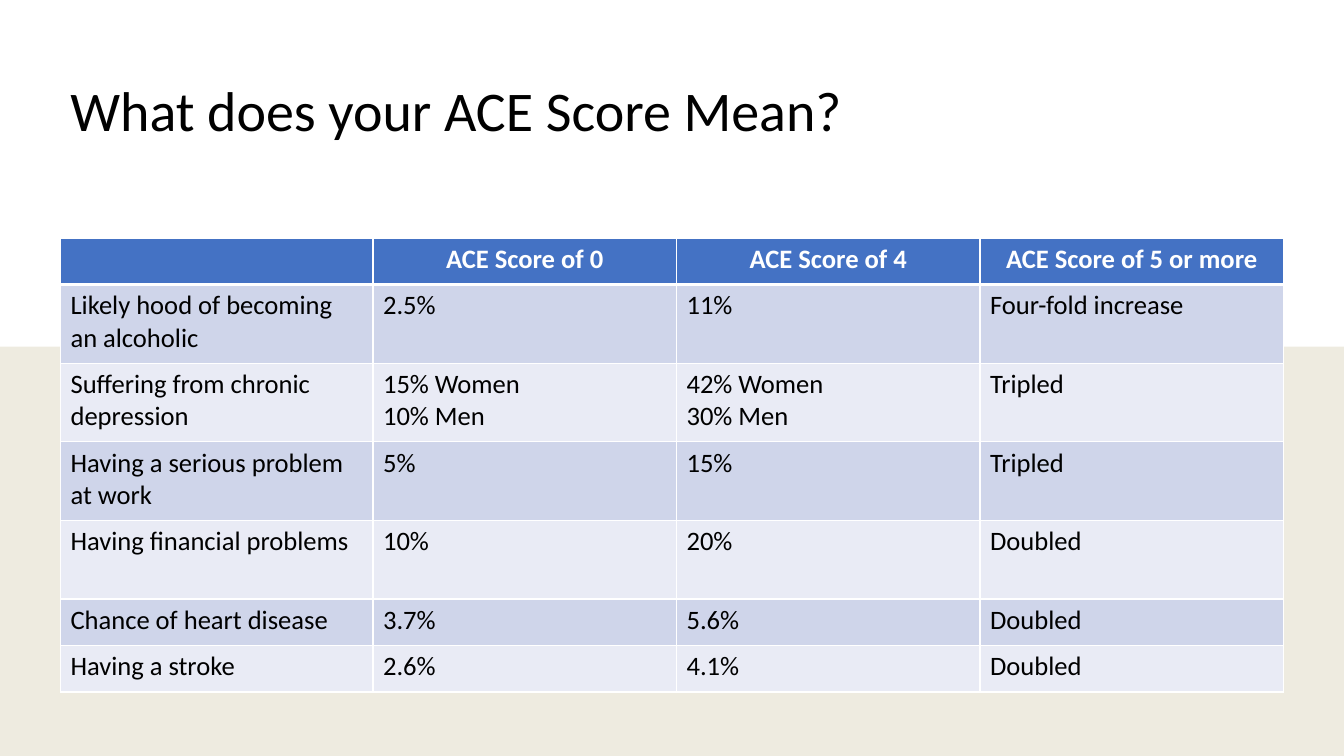
from dataclasses import dataclass
from typing import Optional

from lxml.etree import SubElement
from pptx import Presentation
from pptx.dml.color import RGBColor
from pptx.enum.shapes import MSO_SHAPE as Shape
from pptx.enum.text import MSO_ANCHOR as Anchor, PP_ALIGN as Align
from pptx.oxml.ns import qn
from pptx.util import Inches, Length, Pt

SLIDE_WIDTH, SLIDE_HEIGHT = Inches(13.33), Inches(7.5)


@dataclass(frozen=True)
class Theme:
    font: str = "Calibri"
    title_size: int = 40
    table_size: int = 19
    ink: str = "000000"
    paper: str = "FFFFFF"
    grey: str = "F2F2F2"
    gold: str = "BF9000"
    header: str = "4472C4"
    bands: tuple[str, str] = ("CFD5EA", "E9EBF5")
    thin_rule: int = 1
    header_rule: int = 3


@dataclass(frozen=True)
class Box:
    """A frame in percent of the slide's width and height."""
    left: float
    top: float
    width: float
    height: float

    def frame(self) -> tuple[Length, Length, Length, Length]:
        return across(self.left), down(self.top), across(self.width), down(self.height)


@dataclass(frozen=True)
class Layer:
    box: Box
    color: str
    opacity: Optional[int] = None


@dataclass(frozen=True)
class Risk:
    """One table row; its height is in percent of the slide."""
    texts: tuple[str, str, str, str]
    height: float


def across(percent: float) -> Length:
    return Length(round(SLIDE_WIDTH * percent / 100))


def down(percent: float) -> Length:
    return Length(round(SLIDE_HEIGHT * percent / 100))


THEME = Theme()
FULL = Box(0, 0, 100, 100)
LAYERS = (
    Layer(FULL, THEME.grey),
    Layer(FULL, THEME.gold, opacity=7),
    Layer(Box(0, 0, 100, 45.85), THEME.paper),
)
TITLE = Box(4.5, 5.35, 91, 19.35)
SHORT, TALL = 6.15, 10.4
TABLE = Box(4.5, 31.5, 91, 3 * SHORT + 4 * TALL)
FIRST_COLUMN = 23.25
RISKS = (
    Risk(("", "ACE Score of 0", "ACE Score of 4", "ACE Score of 5 or more"), SHORT),
    Risk(("Likely hood of becoming an alcoholic", "2.5%", "11%", "Four-fold increase"), TALL),
    Risk(("Suffering from chronic depression", "15% Women\n10% Men",
          "42% Women\n30% Men", "Tripled"), TALL),
    Risk(("Having a serious problem at work", "5%", "15%", "Tripled"), TALL),
    Risk(("Having financial problems", "10%", "20%", "Doubled"), TALL),
    Risk(("Chance of heart disease", "3.7%", "5.6%", "Doubled"), SHORT),
    Risk(("Having a stroke", "2.6%", "4.1%", "Doubled"), SHORT),
)


def style(paragraph, size: int, color: str, bold: bool = False) -> None:
    font = paragraph.font
    font.name, font.size, font.bold = THEME.font, Pt(size), bold
    font.color.rgb = RGBColor.from_string(color)


def add_layer(slide, layer: Layer) -> None:
    panel = slide.shapes.add_shape(Shape.RECTANGLE, *layer.box.frame())
    panel.shadow.inherit = False
    panel.line.fill.background()
    panel.fill.solid()
    panel.fill.fore_color.rgb = RGBColor.from_string(layer.color)
    if layer.opacity is not None:
        color = panel.fill._xPr.find(f".//{qn('a:srgbClr')}")
        SubElement(color, qn("a:alpha"), val=str(layer.opacity * 1000))


def add_title(slide, text: str) -> None:
    frame = slide.shapes.add_textbox(*TITLE.frame()).text_frame
    frame.word_wrap = True
    frame.vertical_anchor = Anchor.MIDDLE
    frame.text = text
    heading = frame.paragraphs[0]
    heading.line_spacing = 0.9
    style(heading, THEME.title_size, THEME.ink)


def set_borders(cell, top: int, bottom: int) -> None:
    """Rule all four sides; must run before the cell gets its fill."""
    widths = {"L": THEME.thin_rule, "R": THEME.thin_rule, "T": top, "B": bottom}
    properties = cell._tc.get_or_add_tcPr()
    for side, points in widths.items():
        rule = SubElement(properties, qn(f"a:ln{side}"), w=str(Pt(points)))
        SubElement(SubElement(rule, qn("a:solidFill")), qn("a:srgbClr"), val=THEME.paper)


def fill_cell(cell, text: str, row: int) -> None:
    is_header = row == 0
    set_borders(cell,
                top=THEME.header_rule if row == 1 else THEME.thin_rule,
                bottom=THEME.header_rule if is_header else THEME.thin_rule)
    cell.fill.solid()
    cell.fill.fore_color.rgb = RGBColor.from_string(
        THEME.header if is_header else THEME.bands[(row - 1) % 2])
    cell.text = text
    for paragraph in cell.text_frame.paragraphs:
        paragraph.alignment = Align.CENTER if is_header else Align.LEFT
        style(paragraph, THEME.table_size, THEME.paper if is_header else THEME.ink, is_header)


def add_risk_table(slide) -> None:
    column_count = len(RISKS[0].texts)
    table = slide.shapes.add_table(len(RISKS), column_count, *TABLE.frame()).table
    score_column = (TABLE.width - FIRST_COLUMN) / (column_count - 1)
    for index, column in enumerate(table.columns):
        column.width = across(score_column if index else FIRST_COLUMN)
    for row, risk in enumerate(RISKS):
        table.rows[row].height = down(risk.height)
        for index, text in enumerate(risk.texts):
            fill_cell(table.cell(row, index), text, row)


def main() -> None:
    presentation = Presentation()
    presentation.slide_width, presentation.slide_height = SLIDE_WIDTH, SLIDE_HEIGHT
    slide = presentation.slides.add_slide(presentation.slide_layouts[6])
    for layer in LAYERS:
        add_layer(slide, layer)
    add_title(slide, "What does your ACE Score Mean?")
    add_risk_table(slide)
    presentation.save("out.pptx")


if __name__ == "__main__":
    main()
